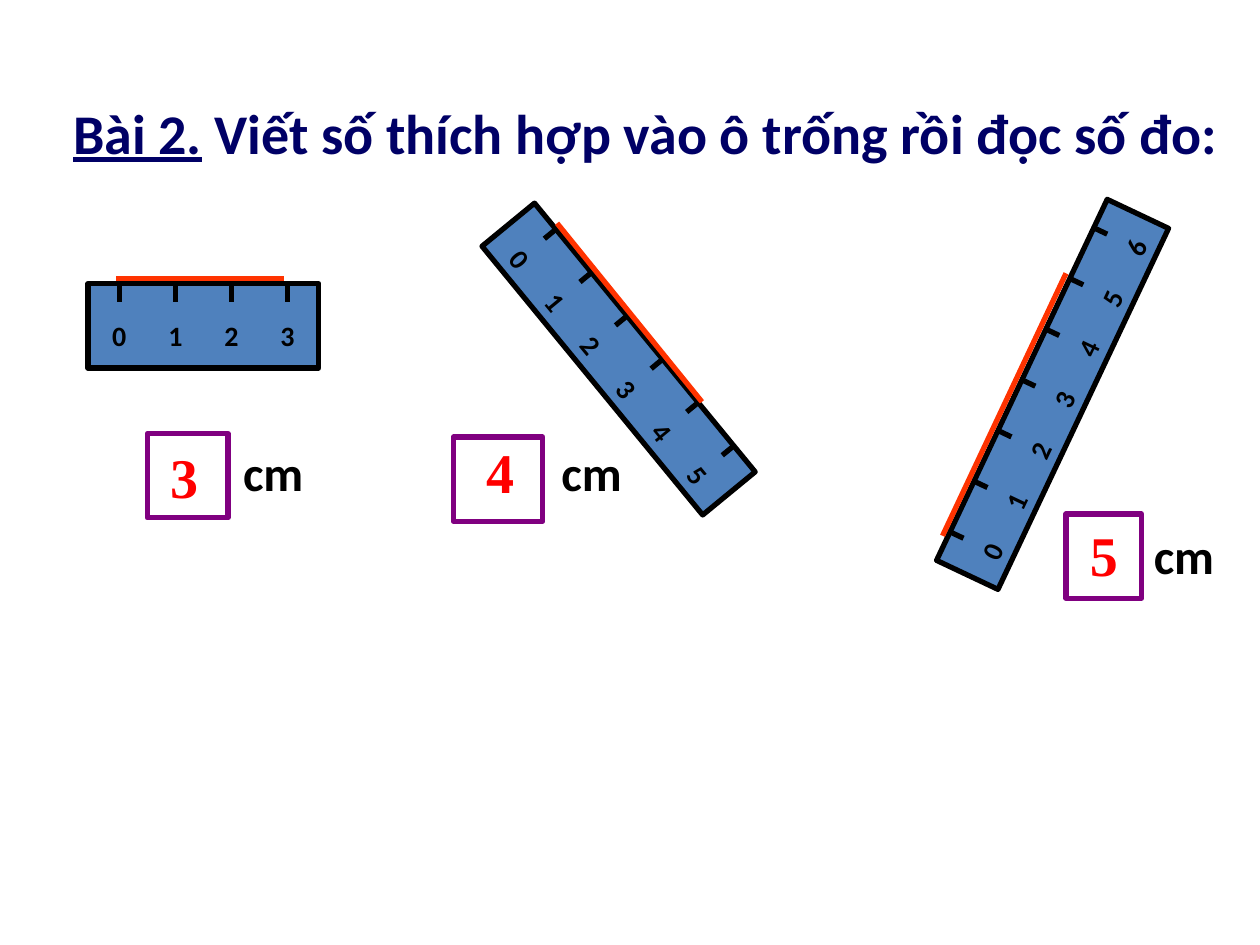
from math import cos, radians, sin

from lxml.etree import SubElement
from pptx import Presentation
from pptx.dml.color import RGBColor
from pptx.enum.shapes import MSO_CONNECTOR as Connector, MSO_SHAPE as Shape
from pptx.enum.text import MSO_ANCHOR as Anchor, MSO_AUTO_SIZE as AutoSize, PP_ALIGN as Align
from pptx.oxml.ns import qn
from pptx.util import Cm, Pt

BLACK = RGBColor(0x00, 0x00, 0x00)
WHITE = RGBColor(0xFF, 0xFF, 0xFF)
NAVY = RGBColor(0x00, 0x00, 0x66)
RULER_BLUE = RGBColor(0x4F, 0x81, 0xBD)
SEGMENT_RED = RGBColor(0xFF, 0x33, 0x00)
ANSWER_RED = RGBColor(0xFF, 0x00, 0x00)
PURPLE = RGBColor(0x80, 0x00, 0x80)


class Worksheet:
    body_font = "Calibri"
    answer_font = "Times New Roman"
    stroke = Pt(3)
    unit_step = 1.13
    label_width, label_height = 0.8, 0.94

    def __init__(self, slide):
        self.slide = slide

    def style(self, frame, size, color, font=body_font, align=Align.LEFT):
        frame.word_wrap = True
        frame.auto_size = AutoSize.SHAPE_TO_FIT_TEXT
        frame.vertical_anchor = Anchor.TOP
        paragraph = frame.paragraphs[0]
        paragraph.alignment = align
        for run in paragraph.runs:
            run.font.name = font
            run.font.size = Pt(size)
            run.font.bold = True
            run.font.color.rgb = color

    def title(self, number, task, left, top, width, height):
        heading = self.slide.shapes.title
        heading.left, heading.top = Cm(left), Cm(top)
        heading.width, heading.height = Cm(width), Cm(height)
        paragraph = heading.text_frame.paragraphs[0]
        for part in (number, task):
            paragraph.add_run().text = part
        self.style(heading.text_frame, 32, NAVY)
        paragraph.runs[0].font.underline = True

    def text(self, words, left, top, width, height, size, color, parent=None, **look):
        box = (parent or self.slide).shapes.add_textbox(Cm(left), Cm(top), Cm(width), Cm(height))
        box.text_frame.text = words
        self.style(box.text_frame, size, color, **look)
        return box

    def rectangle(self, left, top, width, height, fill, outline, parent=None):
        rect = (parent or self.slide).shapes.add_shape(
            Shape.RECTANGLE, Cm(left), Cm(top), Cm(width), Cm(height))
        rect.shadow.inherit = False
        rect.fill.solid()
        rect.fill.fore_color.rgb = fill
        rect.line.color.rgb = outline
        rect.line.width = self.stroke
        return rect

    def line(self, start, end, color, parent=None):
        connector = (parent or self.slide).shapes.add_connector(
            Connector.STRAIGHT, *(Cm(value) for value in (*start, *end)))
        connector.line.color.rgb = color
        connector.line.width = self.stroke
        SubElement(connector._element.spPr, qn("a:effectLst"))

    def ruler(self, center_x, center_y, length, depth, angle, units, tick, label_shift):
        group = self.slide.shapes.add_group_shape()
        body = self.rectangle(center_x - length / 2, center_y - depth / 2, length, depth,
                              RULER_BLUE, BLACK, group)
        body.rotation = angle
        cosine, sine = cos(radians(angle)), sin(radians(angle))

        def place(along, across):
            return (center_x + along * cosine - across * sine,
                    center_y + along * sine + across * cosine)

        for mark in range(units + 1):
            along = (mark - units / 2) * self.unit_step
            self.line(place(along, -depth / 2), place(along, tick - depth / 2), BLACK, group)
            x, y = place(along, label_shift)
            label = self.text(str(mark), x - self.label_width / 2, y - self.label_height / 2,
                              self.label_width, self.label_height, 16, BLACK, group,
                              align=Align.CENTER)
            label.rotation = angle

    def answer(self, value, square, value_at, unit_at):
        self.text("cm", *unit_at, 2.54, 1.45, 28, BLACK)
        self.rectangle(*square, 1.7, WHITE, PURPLE)
        self.text(value, *value_at, 1.88, 1.63, 32, ANSWER_RED, font=self.answer_font)


def main():
    deck = Presentation()
    deck.slide_width, deck.slide_height = Cm(25.4), Cm(19.05)
    sheet = Worksheet(deck.slides.add_slide(deck.slide_layouts[5]))

    sheet.title("Bài 2.", " Viết số thích hợp vào ô trống rồi đọc số đo:",
                1.22, 1.85, 23.83, 1.63)

    sheet.ruler(12.47, 7.24, 7.01, 1.37, 50.6, units=5, tick=0.3, label_shift=0.25)
    sheet.ruler(21.22, 7.95, 8.05, 1.37, 295.3, units=6, tick=0.3, label_shift=0.25)
    sheet.ruler(4.1, 6.57, 4.65, 1.7, 0, units=3, tick=0.36, label_shift=0.2)

    measured_segments = [
        ((2.34, 5.61), (5.72, 5.61)),
        ((11.23, 4.5), (14.15, 8.1)),
        ((19, 10.8), (21.49, 5.51)),
    ]
    for start, end in measured_segments:
        sheet.line(start, end, SEGMENT_RED)

    sheet.answer("3", (2.97, 8.74, 1.63), (3.18, 8.79), (4.65, 8.79))
    sheet.answer("4", (9.14, 8.81, 1.8), (9.55, 8.69), (11.07, 8.79))
    sheet.answer("5", (21.49, 10.36, 1.52), (21.72, 10.36), (23.01, 10.46))

    deck.save("out.pptx")


if __name__ == "__main__":
    main()
